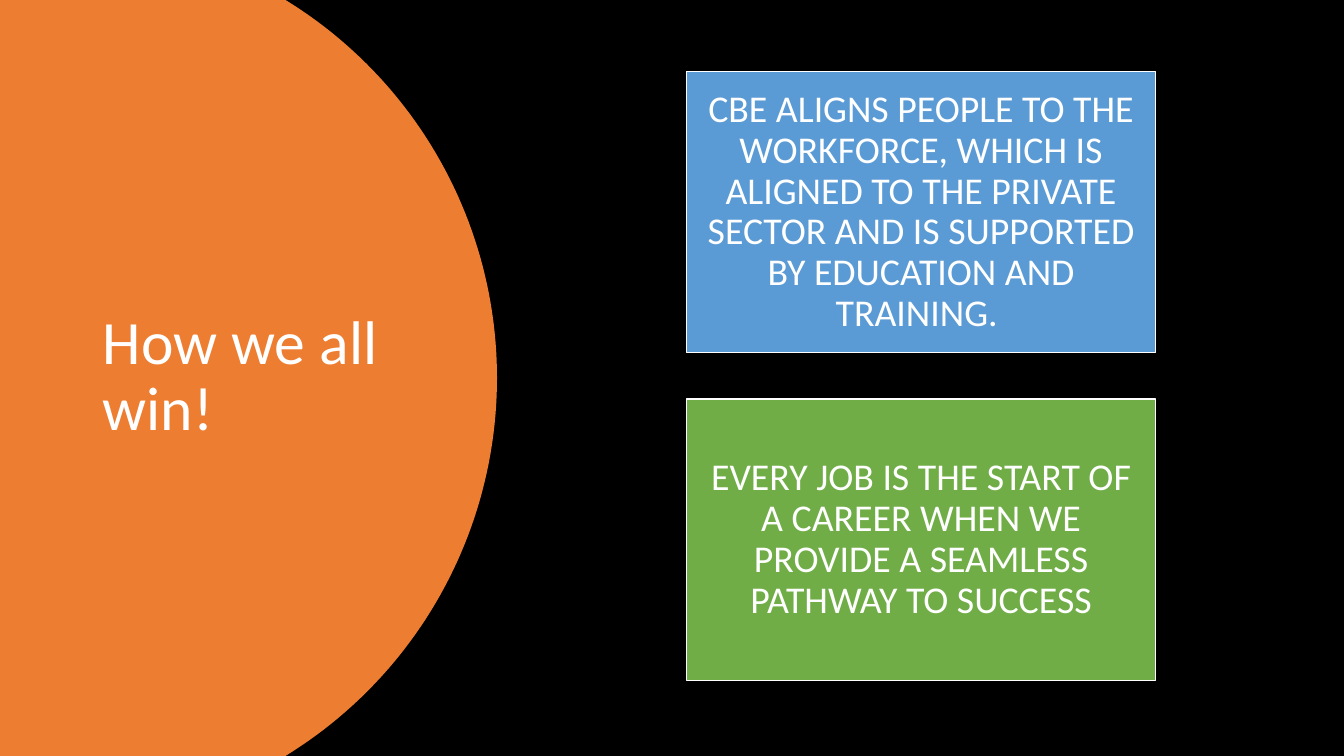
import math
from pptx import Presentation
from pptx.dml.color import RGBColor
from pptx.enum import shapes, text
from pptx.util import Inches, Pt

TITLE = "How we all win!"
CARDS = [
    ("CBE ALIGNS PEOPLE TO THE WORKFORCE, WHICH IS ALIGNED TO THE PRIVATE "
     "SECTOR AND IS SUPPORTED BY EDUCATION AND TRAINING. ", "blue"),
    ("EVERY JOB IS THE START OF A CAREER WHEN WE PROVIDE A SEAMLESS "
     "PATHWAY TO SUCCESS", "green"),
]
COLORS = {"black": "000000", "white": "FFFFFF", "orange": "ED7D31",
          "blue": "5B9BD5", "green": "70AD47"}
FONT = "Calibri"
WIDTH, HEIGHT = 13.33, 7.5
CARD_LEFT, CARD_TOP, CARD_WIDTH, CARD_HEIGHT, CARD_GAP = 6.81, 0.71, 4.65, 2.79, 0.46
RADIUS, CENTER_X, ARC_STEPS = 4.4, 0.53, 96


def color(name):
    return RGBColor.from_string(COLORS[name])


def write(frame, words, size, align):
    frame.word_wrap = True
    frame.auto_size = text.MSO_AUTO_SIZE.NONE
    frame.vertical_anchor = text.MSO_ANCHOR.MIDDLE
    para = frame.paragraphs[0]
    para.alignment = align
    para.line_spacing = 0.9
    span = para.add_run()
    span.text = words
    span.font.name = FONT
    span.font.size = Pt(size)
    span.font.color.rgb = color("white")


deck = Presentation()
deck.slide_width, deck.slide_height = Inches(WIDTH), Inches(HEIGHT)
page = deck.slides.add_slide(deck.slide_layouts[5])
page.background.fill.solid()
page.background.fill.fore_color.rgb = color("black")

# Orange panel with a circular right edge
middle = HEIGHT / 2
half_angle = math.asin(middle / RADIUS)
angles = [half_angle * (2 * step / ARC_STEPS - 1) for step in range(ARC_STEPS + 1)]
arc = [(Inches(CENTER_X + RADIUS * math.cos(angle)),
        Inches(middle + RADIUS * math.sin(angle))) for angle in angles]
builder = page.shapes.build_freeform(0, 0)
builder.add_line_segments(arc + [(0, Inches(HEIGHT))], close=True)
panel = builder.convert_to_shape()
panel.shadow.inherit = False
panel.fill.solid()
panel.fill.fore_color.rgb = color("orange")
panel.line.fill.background()

# Title, brought in front of the panel
title = page.shapes.title
title.left, title.top = Inches(0.92), Inches(0.7)
title.width, title.height = Inches(3.23), Inches(6.09)
write(title.text_frame, TITLE, 44, text.PP_ALIGN.LEFT)
panel.element.addnext(title.element)

# Stacked message cards
for index, (words, fill) in enumerate(CARDS):
    top = CARD_TOP + index * (CARD_HEIGHT + CARD_GAP)
    card = page.shapes.add_shape(
        shapes.MSO_SHAPE.RECTANGLE, Inches(CARD_LEFT), Inches(top),
        Inches(CARD_WIDTH), Inches(CARD_HEIGHT))
    card.shadow.inherit = False
    card.fill.solid()
    card.fill.fore_color.rgb = color(fill)
    card.line.color.rgb = color("white")
    card.line.width = Pt(1)
    frame = card.text_frame
    frame.margin_left = frame.margin_right = Inches(0.11)
    frame.margin_top = frame.margin_bottom = Inches(0.11)
    write(frame, words, 27, text.PP_ALIGN.CENTER)

deck.save("out.pptx")
